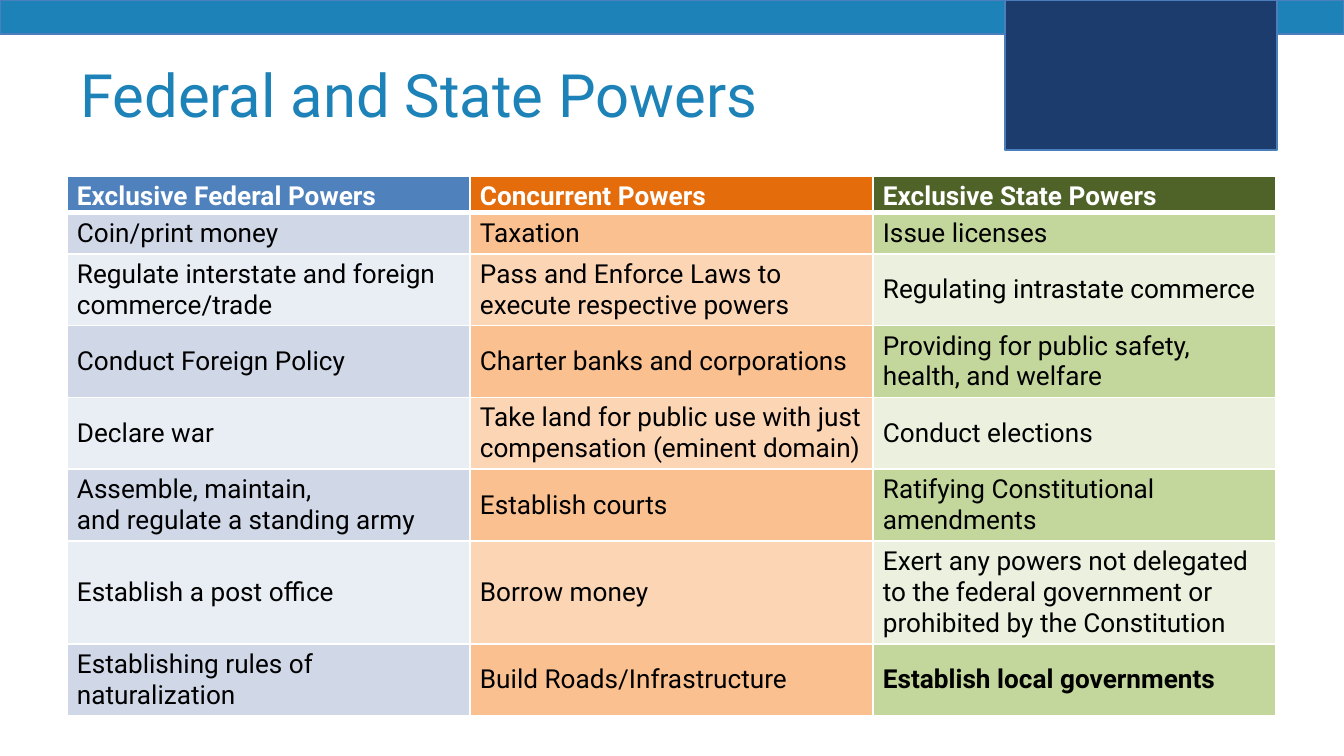
"""Build a slide that compares federal, shared and state powers in a table."""
from dataclasses import dataclass

from lxml import etree
from pptx import Presentation
from pptx.dml.color import RGBColor
from pptx.enum.shapes import MSO_SHAPE
from pptx.enum.text import MSO_ANCHOR, MSO_AUTO_SIZE, PP_ALIGN
from pptx.oxml.ns import qn
from pptx.util import Pt

RECT = MSO_SHAPE.RECTANGLE
MIDDLE = MSO_ANCHOR.MIDDLE
LEFT = PP_ALIGN.LEFT
FIXED = MSO_AUTO_SIZE.NONE

TITLE = "Federal and State Powers"
HEADS = ["Exclusive Federal Powers", "Concurrent Powers", "Exclusive State Powers"]
POWERS = [
    ("Coin/print money", "Taxation", "Issue licenses"),
    ("Regulate interstate and foreign commerce/trade",
     "Pass and Enforce Laws to execute respective powers",
     "Regulating intrastate commerce"),
    ("Conduct Foreign Policy", "Charter banks and corporations",
     "Providing for public safety, health, and welfare"),
    ("Declare war",
     "Take land for public use with just compensation (eminent domain)",
     "Conduct elections"),
    ("Assemble, maintain,\nand regulate a standing army", "Establish courts",
     "Ratifying Constitutional amendments"),
    ("Establish a post office", "Borrow money",
     "Exert any powers not delegated to the federal government "
     "or prohibited by the Constitution"),
    ("Establishing rules of naturalization", "Build Roads/Infrastructure",
     "Establish local governments"),
]
STRONG = {"Establish local governments"}


@dataclass(frozen=True)
class Theme:
    font: str = "Roboto"
    title: int = 32
    body: int = 14
    blue: str = "1C82B8"
    navy: str = "1C3C6D"
    edge: str = "4B7EBC"
    white: str = "FFFFFF"
    black: str = "000000"
    heads: tuple = ("4F81BD", "E46C0A", "4F6228")
    odd: tuple = ("D0D8E8", "FAC090", "C3D69B")
    even: tuple = ("E9EDF4", "FCD5B5", "EBF1DE")


THEME = Theme()
WIDE, HIGH = 1344, 756
BARS = [((0, 0, WIDE, 34), THEME.blue), ((1005, 0, 272, 150), THEME.navy)]
TITLE_BOX = (67, 31, 1210, 126)
GRID = (67, 176)
COL = 403
ROWS = [37, 40, 71, 71, 71, 71, 102, 71]


def px(n):
    return round(n * 9144000 / WIDE)


def paint(fill, tint):
    fill.solid()
    fill.fore_color.rgb = RGBColor.from_string(tint)


def write(frame, text, size, tint, bold=False):
    para = frame.paragraphs[0]
    para.alignment = LEFT
    for i, line in enumerate(text.split("\n")):
        if i:
            para.add_line_break()
        run = para.add_run()
        run.text = line
        font = run.font
        font.name, font.size, font.bold = THEME.font, Pt(size), bold
        font.color.rgb = RGBColor.from_string(tint)


def add_bar(slide, box, tint):
    bar = slide.shapes.add_shape(RECT, *map(px, box))
    bar.shadow.inherit = False
    paint(bar.fill, tint)
    paint(bar.line.fill, THEME.edge)
    bar.line.width = Pt(0.75)


def rule(cell, sides):
    props = cell._tc.get_or_add_tcPr()
    for i, (side, width) in enumerate(sides.items()):
        line = etree.Element(qn(f"a:ln{side}"), w=str(Pt(width)))
        fill = etree.SubElement(line, qn("a:solidFill"))
        etree.SubElement(fill, qn("a:srgbClr"), val=THEME.white)
        props.insert(i, line)


def add_title(slide):
    title = slide.shapes.title
    title.left, title.top, title.width, title.height = map(px, TITLE_BOX)
    frame = title.text_frame
    frame.auto_size = FIXED
    frame.word_wrap = True
    frame.vertical_anchor = MIDDLE
    write(frame, TITLE, THEME.title, THEME.blue)
    slide.shapes._spTree.append(title._element)


def add_grid(slide):
    data = [HEADS] + POWERS
    size = (COL * len(HEADS), sum(ROWS))
    table = slide.shapes.add_table(len(data), len(HEADS), *map(px, GRID + size)).table
    for col in table.columns:
        col.width = px(COL)
    for r, (row, high) in enumerate(zip(data, ROWS)):
        table.rows[r].height = px(high)
        head = r == 0
        tints = THEME.heads if head else THEME.odd if r % 2 else THEME.even
        for c, text in enumerate(row):
            cell = table.cell(r, c)
            cell.vertical_anchor = MIDDLE
            cell.margin_left = cell.margin_right = px(10)
            cell.margin_top = px(5)
            cell.margin_bottom = px(1 if head else 5)
            paint(cell.fill, tints[c])
            rule(cell, {"L": 1, "R": 1, "T": 3 if r == 1 else 1, "B": 3 if head else 1})
            ink = THEME.white if head else THEME.black
            write(cell.text_frame, text, THEME.body, ink, head or text in STRONG)


def main():
    deck = Presentation()
    deck.slide_width, deck.slide_height = px(WIDE), px(HIGH)
    slide = deck.slides.add_slide(deck.slide_layouts[5])
    for box, tint in BARS:
        add_bar(slide, box, tint)
    add_title(slide)
    add_grid(slide)
    deck.save("out.pptx")


if __name__ == "__main__":
    main()
